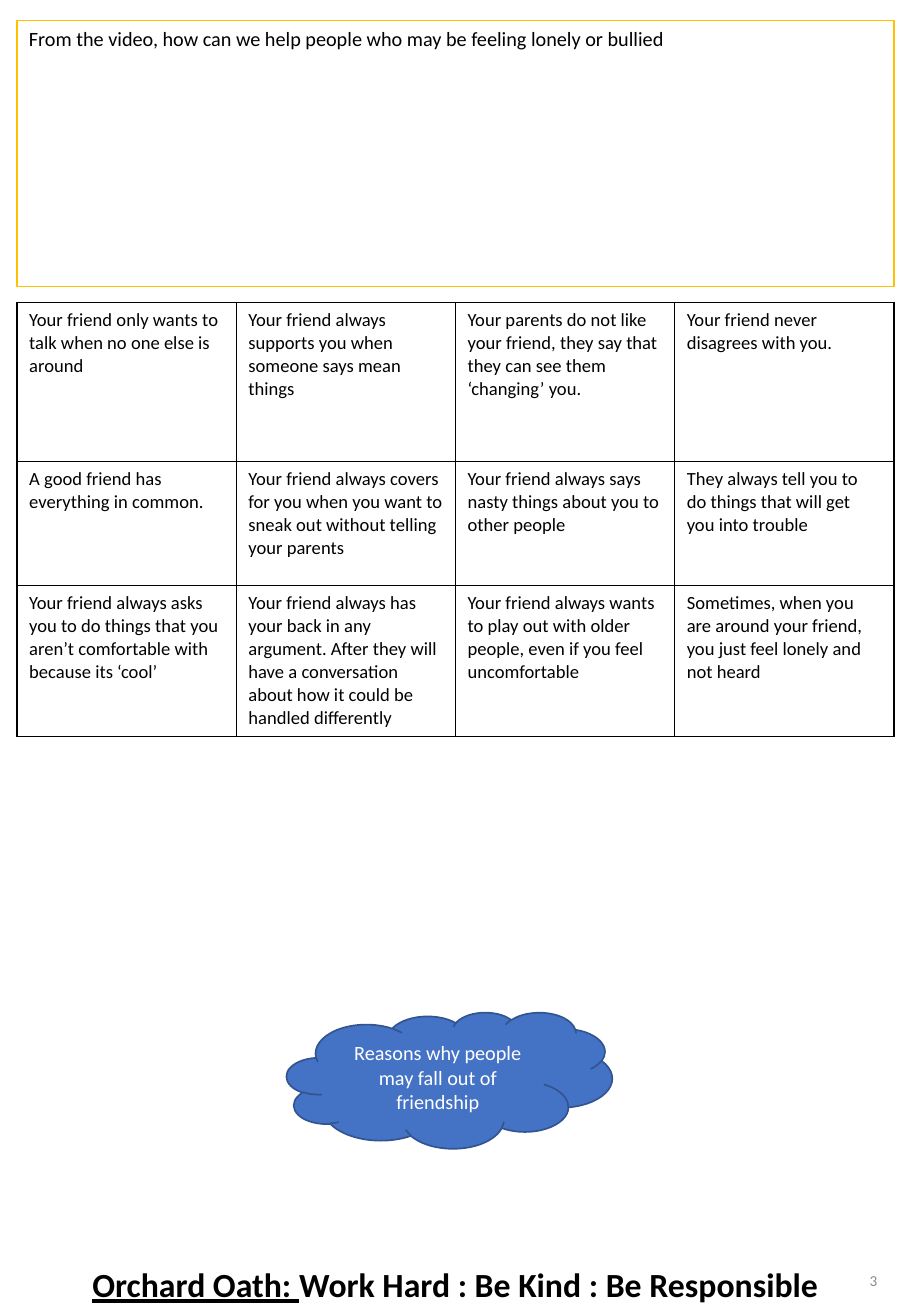
from dataclasses import dataclass

from lxml import etree
from pptx import Presentation
from pptx import util as u
from pptx.dml import color
from pptx.enum import shapes, text
from pptx.oxml import ns

FONT = "Calibri"
BLACK = "000000"
MARGIN = 0.14
CONTENT_WIDTH = 7.22
ROW_HEIGHTS = [1.31, 1.02, 1.24]
FRIENDSHIP_STATEMENTS = [
    [
        "Your friend only wants to talk when no one else is around",
        "Your friend always supports you when someone says mean things",
        "Your parents do not like your friend, they say that they can see them ‘changing’ you.",
        "Your friend never disagrees with you.",
    ],
    [
        "A good friend has everything in common.",
        "Your friend always covers for you when you want to sneak out without telling your parents",
        "Your friend always says nasty things about you to other people",
        "They always tell you to do things that will get you into trouble",
    ],
    [
        "Your friend always asks you to do things that you aren’t comfortable with because its ‘cool’",
        "Your friend always has your back in any argument. After they will have a conversation "
        "about how it could be handled differently",
        "Your friend always wants to play out with older people, even if you feel uncomfortable",
        "Sometimes, when you are around your friend, you just feel lonely and not heard",
    ],
]


@dataclass
class Span:
    words: str
    size: float
    colour: str = BLACK
    bold: bool = False
    underline: bool = False


@dataclass
class Box:
    left: float
    top: float
    width: float
    height: float
    spans: list[Span]
    align: text.PP_ALIGN = text.PP_ALIGN.LEFT
    anchor: text.MSO_ANCHOR = text.MSO_ANCHOR.TOP
    line_spacing: float = 1.0
    preset: shapes.MSO_SHAPE | None = None
    fill: str | None = None
    line: str | None = None
    line_width: float = 1


def rgb(colour: str) -> color.RGBColor:
    return color.RGBColor.from_string(colour)


def add_spans(para, spans: list[Span]) -> None:
    for span in spans:
        run = para.add_run()
        run.text = span.words
        run.font.name = FONT
        run.font.size = u.Pt(span.size)
        run.font.bold = span.bold
        run.font.underline = span.underline
        run.font.color.rgb = rgb(span.colour)


def draw_box(page, box: Box) -> None:
    place = [u.Inches(n) for n in (box.left, box.top, box.width, box.height)]
    if box.preset is None:
        shape = page.shapes.add_textbox(*place)
    else:
        shape = page.shapes.add_shape(box.preset, *place)
        shape.shadow.inherit = False
        shape.line.color.rgb = rgb(box.line)
        shape.line.width = u.Pt(box.line_width)
        if box.fill:
            shape.fill.solid()
            shape.fill.fore_color.rgb = rgb(box.fill)
        else:
            shape.fill.background()
    frame = shape.text_frame
    frame.word_wrap = True
    frame.vertical_anchor = box.anchor
    para = frame.paragraphs[0]
    para.alignment = box.align
    para.line_spacing = box.line_spacing
    add_spans(para, box.spans)


def add_borders(cell, colour: str, width: float) -> None:
    properties = cell._tc.get_or_add_tcPr()
    for index, side in enumerate(("lnL", "lnR", "lnT", "lnB")):
        border = etree.Element(ns.qn(f"a:{side}"), w=str(u.Pt(width)))
        fill = etree.SubElement(border, ns.qn("a:solidFill"))
        etree.SubElement(fill, ns.qn("a:srgbClr"), val=colour)
        properties.insert(index, border)


def draw_statements(page, top: float) -> None:
    columns = len(FRIENDSHIP_STATEMENTS[0])
    frame = page.shapes.add_table(
        len(ROW_HEIGHTS), columns, u.Inches(MARGIN), u.Inches(top),
        u.Inches(CONTENT_WIDTH), u.Inches(sum(ROW_HEIGHTS)),
    )
    table = frame.table
    table.first_row = False
    table.horz_banding = False
    for column in table.columns:
        column.width = u.Inches(CONTENT_WIDTH / columns)
    for row, height, statements in zip(table.rows, ROW_HEIGHTS, FRIENDSHIP_STATEMENTS):
        row.height = u.Inches(height)
        for cell, statement in zip(row.cells, statements):
            cell.fill.background()
            add_borders(cell, BLACK, 1)
            add_spans(cell.text_frame.paragraphs[0], [Span(statement, 11)])


def main() -> None:
    deck = Presentation()
    deck.slide_width = u.Inches(7.5)
    deck.slide_height = u.Inches(10.83)
    page = deck.slides.add_slide(deck.slide_layouts[6])

    oath = Box(
        0, 10.39, 7.5, 0.44,
        [
            Span("Orchard Oath: ", 20, bold=True, underline=True),
            Span("Work Hard : Be Kind : Be Responsible", 20, bold=True),
        ],
        align=text.PP_ALIGN.CENTER, line_spacing=0.9,
    )
    page_number = Box(
        5.63, 10.25, 1.69, 0.58, [Span("3", 9, "8C8C8C")],
        align=text.PP_ALIGN.RIGHT, anchor=text.MSO_ANCHOR.MIDDLE,
    )
    reasons_cloud = Box(
        2.36, 8.33, 2.68, 1.12,
        [Span("Reasons why people may fall out of friendship", 12, "FFFFFF")],
        align=text.PP_ALIGN.CENTER, anchor=text.MSO_ANCHOR.MIDDLE,
        preset=shapes.MSO_SHAPE.CLOUD, fill="4472C4", line="325491",
    )
    video_question = Box(
        MARGIN, 0.17, CONTENT_WIDTH, 2.19,
        [Span("From the video, how can we help people who may be feeling lonely or bullied", 12)],
        preset=shapes.MSO_SHAPE.RECTANGLE, line="FFC000", line_width=0.75,
    )

    for box in (oath, page_number):
        draw_box(page, box)
    draw_statements(page, 2.49)
    for box in (reasons_cloud, video_question):
        draw_box(page, box)

    deck.save("out.pptx")


if __name__ == "__main__":
    main()
